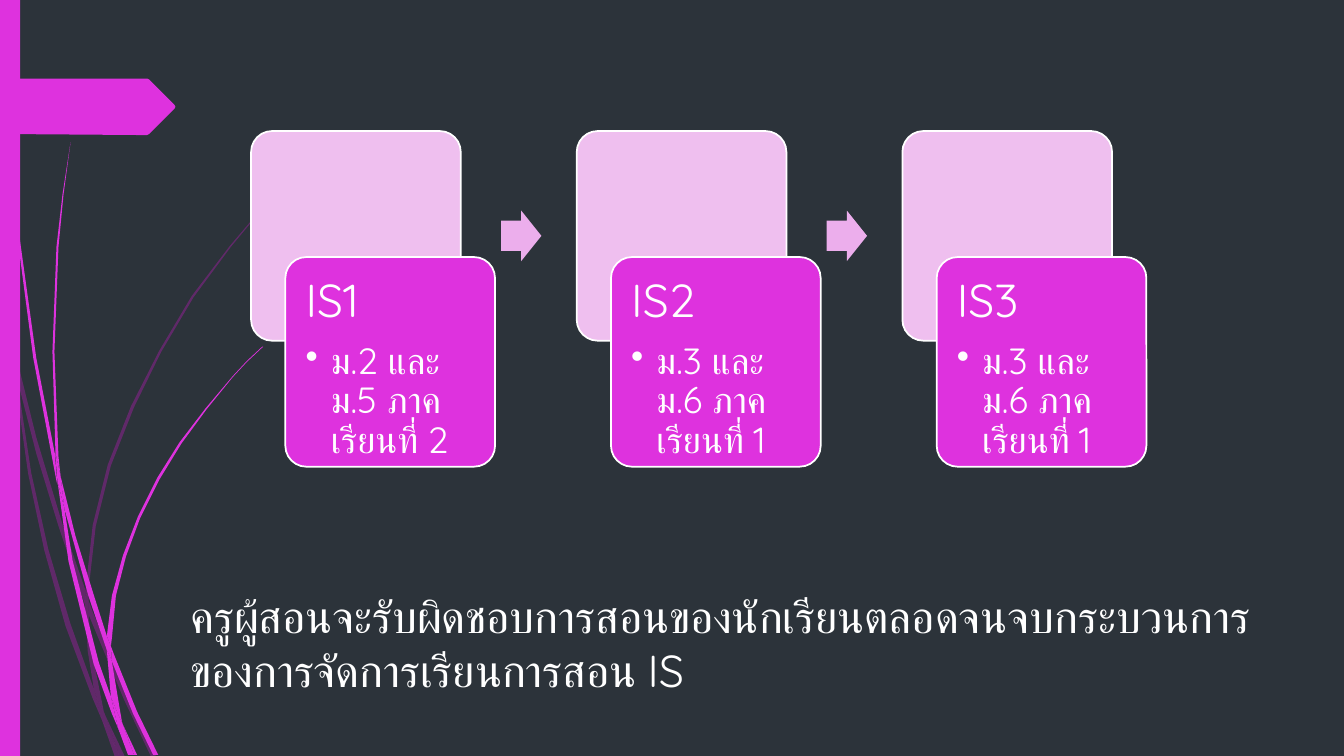
from lxml import etree
from pptx import Presentation
from pptx.dml.color import RGBColor
from pptx.enum.shapes import MSO_SHAPE as Shape
from pptx.enum.text import MSO_ANCHOR as Anchor, PP_ALIGN as Align
from pptx.oxml.ns import qn
from pptx.util import Inches, Pt

# Content
COURSES = [
    ("IS1", "ม.2 และ ม.5 ภาคเรียนที่ 2"),
    ("IS2", "ม.3 และ ม.6 ภาคเรียนที่ 1"),
    ("IS3", "ม.3 และ ม.6 ภาคเรียนที่ 1"),
]
SUMMARY = "ครูผู้สอนจะรับผิดชอบการสอนของนักเรียนตลอดจนจบกระบวนการของการจัดการเรียนการสอน IS"

FONT = "Quicksand"
DARK, WHITE = "2C333A", "FFFFFF"
MAGENTA, PURPLE = "DE32DE", "B01CB0"
PANEL_PINK, ARROW_PINK = "EFBFEF", "ECAEEC"

# Grass blades, each piece a closed outline of (x, y)
PURPLE_BLADES = [
    [(0.11, 3.5), (0.09, 3.22), (0, 2.82), (0, 2.99), (0.1, 3.44)],
    [(0.58, 5.22), (0.84, 5.99), (0.85, 5.86), (0.62, 5.2), (0.36, 4.34),
     (0.14, 3.45), (0.17, 3.76), (0.36, 4.5)],
    [(0.92, 6.07), (0.88, 5.96), (0.88, 6.1), (1.23, 6.94), (1.5, 7.51),
     (1.55, 7.51), (1.27, 6.92)],
    [(1.19, 7.51), (1.24, 7.51), (1.05, 7.11)],
    [(0.93, 6.83), (0.7, 6.19), (0.48, 5.45), (0.31, 4.69), (0.17, 3.76), (0.11, 3.5),
     (0.28, 4.7), (0.44, 5.46), (0.65, 6.21), (0.92, 6.93), (1.01, 7.14), (0.99, 7.07)],
    [(0.84, 5.99), (0.87, 6.46), (0.93, 6.83), (0.96, 6.92), (1.05, 7.11),
     (1.03, 7.06), (0.91, 6.46), (0.88, 6.1), (0.88, 6.08)],
    [(0.88, 5.84), (0.95, 5.22), (1.1, 4.62), (1.33, 4.04), (1.6, 3.49), (1.92, 2.95),
     (2.29, 2.45), (2.68, 1.98), (2.9, 1.75), (3.12, 1.54), (3.12, 1.53), (2.89, 1.75),
     (2.68, 1.97), (2.28, 2.44), (1.9, 2.94), (1.58, 3.48), (1.3, 4.03), (1.07, 4.61),
     (0.92, 5.21), (0.85, 5.84), (0.85, 5.86), (0.88, 5.96)],
    [(1.01, 7.14), (1.14, 7.51), (1.19, 7.51)],
    [(0.88, 6.08), (0.88, 6.1), (0.88, 5.96), (0.85, 5.86), (0.84, 5.99)],
    [(0.96, 6.92), (0.93, 6.83), (0.99, 7.07), (1.01, 7.14), (1.19, 7.51), (1.05, 7.11)],
]
MAGENTA_BLADES = [
    [(0.07, 1.1), (0.17, 2.33), (0.33, 3.55), (0.56, 4.77), (0.57, 4.81), (0.55, 4.57),
     (0.55, 4.53), (0.36, 3.55), (0.19, 2.32), (0.08, 1.09), (0.05, 0.48),
     (0.04, 0), (0.03, 0), (0.04, 0.48)],
    [(0.88, 5.92), (1.06, 6.45), (1.06, 6.33), (1.06, 6.31), (0.93, 5.9), (0.75, 5.32),
     (0.6, 4.72), (0.64, 5.05)],
    [(1.13, 6.49), (1.1, 6.41), (1.11, 6.56), (1.32, 7.08), (1.52, 7.49),
     (1.57, 7.49), (1.36, 7.06)],
    [(1.1, 6.91), (0.98, 6.57), (0.72, 5.56), (0.64, 5.05), (0.57, 4.77), (0.68, 5.57),
     (0.93, 6.59), (1.11, 7.08), (1.17, 7.22), (1.16, 7.17)],
    [(0.6, 4.72), (0.58, 4.53), (0.54, 3.49), (0.58, 2.45), (0.63, 1.93), (0.7, 1.41),
     (0.62, 1.93), (0.56, 2.45), (0.52, 3.49), (0.55, 4.49)],
    [(1.33, 7.49), (1.36, 7.49), (1.22, 7.19)],
    [(0.57, 4.77), (0.64, 5.05), (0.6, 4.72), (0.55, 4.49), (0.55, 4.53)],
    [(1.11, 6.33), (1.15, 5.91), (1.25, 5.52), (1.39, 5.14), (1.58, 4.76), (1.8, 4.4),
     (2.05, 4.06), (2.31, 3.74), (2.45, 3.59), (2.61, 3.44), (2.6, 3.44), (2.45, 3.58),
     (2.31, 3.73), (2.04, 4.05), (1.78, 4.39), (1.56, 4.74), (1.37, 5.12), (1.22, 5.51),
     (1.11, 5.91), (1.06, 6.31), (1.1, 6.41)],
    [(1.17, 7.22), (1.27, 7.49), (1.31, 7.49)],
    [(1.06, 6.45), (1.1, 6.91), (1.16, 7.06), (1.22, 7.19), (1.21, 7.16),
     (1.11, 6.56), (1.09, 6.51)],
    [(1.06, 6.45), (1.09, 6.51), (1.11, 6.56), (1.1, 6.41), (1.06, 6.31), (1.06, 6.33)],
    [(1.16, 7.06), (1.1, 6.91), (1.16, 7.17), (1.17, 7.22), (1.3, 7.49),
     (1.33, 7.49), (1.22, 7.19)],
]
PAGE_TAG = [(1.73, 1.08), (1.48, 1.33), (1.46, 1.34), (1.36, 1.34), (0, 1.33), (0, 0.78),
            (1.36, 0.78), (1.46, 0.78), (1.48, 0.79), (1.73, 1.04), (1.74, 1.06)]

# Layout of the course row
ROW_LEFT, ROW_TOP, STEP = 2.49, 1.3, 3.23
SIDE, CARD_DX, CARD_DY = 2.08, 0.34, 1.25
ARROW_DX, ARROW_DY = 2.48, 0.79


def color(hex_string):
    return RGBColor.from_string(hex_string)


def paint(shape, fill, line=None, opacity=None):
    shape.shadow.inherit = False
    shape.fill.solid()
    shape.fill.fore_color.rgb = color(fill)
    if line:
        shape.line.color.rgb = color(line)
        shape.line.width = Pt(1.25)
    else:
        shape.line.fill.background()
    if opacity:
        tint = shape.fill._xPr.find(qn("a:solidFill"))[0]
        etree.SubElement(tint, qn("a:alpha"), val=str(opacity * 1000))


def add_preset(kind, left, top, width, height, fill, line=None, adjustments=()):
    shape = slide.shapes.add_shape(
        kind, Inches(left), Inches(top), Inches(width), Inches(height))
    for i, value in enumerate(adjustments):
        shape.adjustments[i] = value
    paint(shape, fill, line)
    return shape


def add_outline(points, fill, opacity=None):
    start, *rest = [(Inches(x), Inches(y)) for x, y in points]
    builder = slide.shapes.build_freeform(*start)
    builder.add_line_segments(rest, close=True)
    paint(builder.convert_to_shape(), fill, opacity=opacity)


def style_text(paragraph, size):
    paragraph.alignment = Align.LEFT
    for run in paragraph.runs:
        run.font.name = FONT
        run.font.size = Pt(size)
        run.font.color.rgb = color(WHITE)


def add_course(index, name, term):
    left = ROW_LEFT + index * STEP
    add_preset(Shape.ROUNDED_RECTANGLE, left, ROW_TOP, SIDE, SIDE,
               PANEL_PINK, WHITE, [0.1])
    card = add_preset(Shape.ROUNDED_RECTANGLE, left + CARD_DX, ROW_TOP + CARD_DY,
                      SIDE, SIDE, MAGENTA, WHITE, [0.1])
    frame = card.text_frame
    frame.word_wrap = True
    frame.vertical_anchor = Anchor.TOP
    frame.margin_left = frame.margin_right = Inches(0.14)
    frame.margin_top = frame.margin_bottom = Inches(0.14)
    frame.text = f"{name}\n{term}"
    heading, bullet = frame.paragraphs
    for paragraph, size, gap in ((heading, 33, 0.35), (bullet, 26, 0.15)):
        style_text(paragraph, size)
        paragraph.line_spacing = 0.9
        paragraph.space_after = Pt(round(size * gap, 1))
    bullet.level = 1
    props = bullet._p.get_or_add_pPr()
    props.set("marL", str(Inches(0.25)))
    props.set("indent", str(Inches(-0.25)))
    etree.SubElement(props, qn("a:buChar"), char="•")
    if index < len(COURSES) - 1:
        add_preset(Shape.RIGHT_ARROW, left + ARROW_DX, ROW_TOP + ARROW_DY,
                   0.4, 0.5, ARROW_PINK, adjustments=[0.6, 0.5])


prs = Presentation()
prs.slide_width, prs.slide_height = Inches(13.33), Inches(7.5)
slide = prs.slides.add_slide(prs.slide_layouts[6])
slide.background.fill.solid()
slide.background.fill.fore_color.rgb = color(DARK)

# Side decoration
for blade in PURPLE_BLADES:
    add_outline(blade, PURPLE, opacity=40)
for blade in MAGENTA_BLADES:
    add_outline(blade, MAGENTA)
add_preset(Shape.RECTANGLE, 0, 0, 0.2, 7.5, MAGENTA)
add_outline(PAGE_TAG, MAGENTA)

# Course sequence
for index, (name, term) in enumerate(COURSES):
    add_course(index, name, term)

# Summary sentence
summary = slide.shapes.add_textbox(Inches(1.79), Inches(5.79), Inches(11.1), Inches(0.64))
summary.text_frame.word_wrap = True
summary.text_frame.text = SUMMARY
style_text(summary.text_frame.paragraphs[0], 32)

prs.save("out.pptx")
